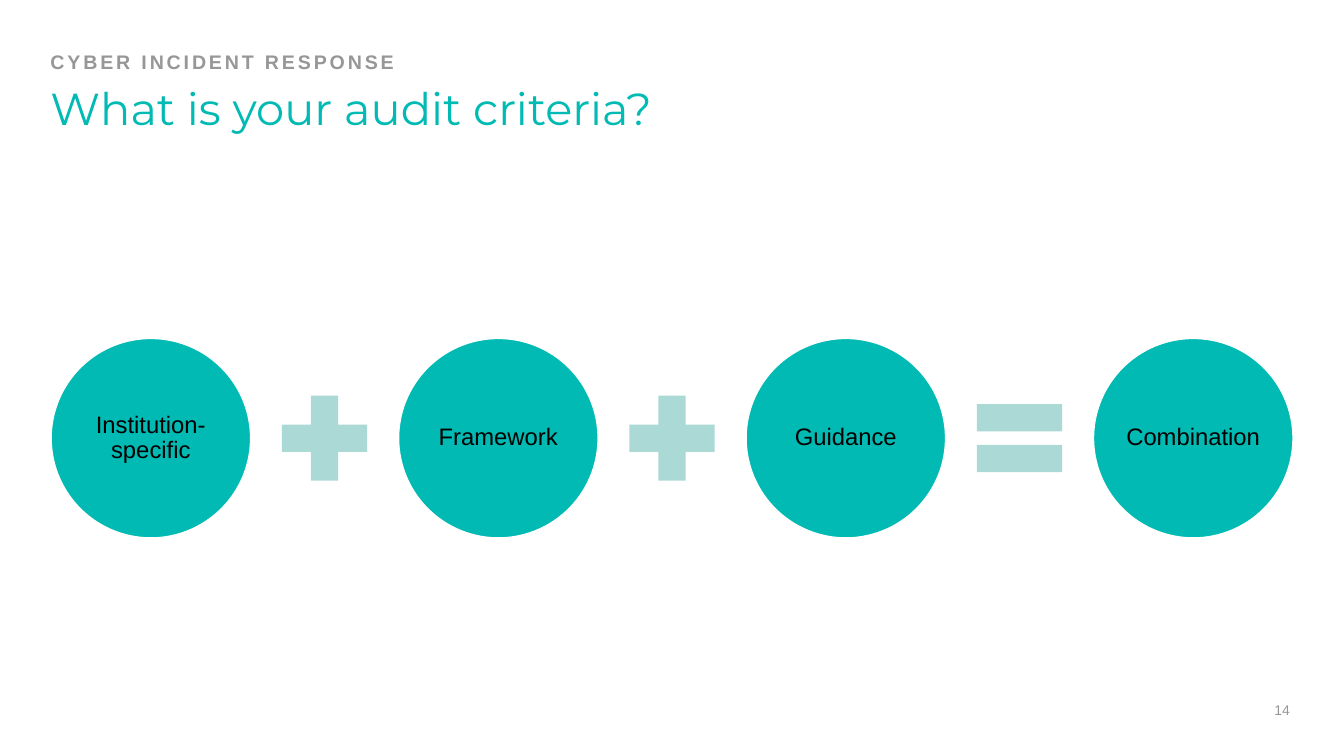
from dataclasses import dataclass

from pptx import Presentation
from pptx.dml.color import RGBColor
from pptx.enum.shapes import MSO_SHAPE
from pptx.enum.text import MSO_ANCHOR, PP_ALIGN
from pptx.util import Pt


@dataclass(frozen=True)
class Theme:
    """Colours, fonts and type sizes of the slide."""
    teal: RGBColor = RGBColor(0x00, 0xBA, 0xB3)
    pale_teal: RGBColor = RGBColor(0xAB, 0xD9, 0xD6)
    grey: RGBColor = RGBColor(0x97, 0x97, 0x97)
    black: RGBColor = RGBColor(0x00, 0x00, 0x00)
    white: RGBColor = RGBColor(0xFF, 0xFF, 0xFF)
    heading_font: str = "Montserrat"
    body_font: str = "Arial"
    title_size: int = 32
    circle_size: int = 17
    eyebrow_size: int = 14
    number_size: int = 10


class SlideBuilder:
    """Adds styled elements to one slide, with lengths in points."""

    def __init__(self, slide, theme):
        """Keep the slide and its theme."""
        self.slide = slide
        self.theme = theme

    def fill_text(self, shape, text, size, color, font=None, bold=False, tracking=0,
                  align=PP_ALIGN.LEFT, anchor=MSO_ANCHOR.TOP, insets=(0, 0, 0, 0)):
        """Put one styled paragraph into a shape."""
        frame = shape.text_frame
        frame.word_wrap = True
        frame.vertical_anchor = anchor
        (frame.margin_left, frame.margin_top,
         frame.margin_right, frame.margin_bottom) = map(Pt, insets)
        paragraph = frame.paragraphs[0]
        paragraph.alignment = align
        paragraph.line_spacing = 0.9
        run = paragraph.add_run()
        run.text = text
        if tracking:
            run._r.get_or_add_rPr().set("spc", str(tracking * 100))
        paragraph.font.name = font or self.theme.body_font
        paragraph.font.size = Pt(size)
        paragraph.font.bold = bold
        paragraph.font.color.rgb = color

    def text(self, left, top, width, height, text, size, color, **style):
        """Add a text box."""
        box = self.slide.shapes.add_textbox(Pt(left), Pt(top), Pt(width), Pt(height))
        self.fill_text(box, text, size, color, **style)

    def shape(self, kind, left, middle, size, fill):
        """Add a square preset shape centred on a horizontal line."""
        shape = self.slide.shapes.add_shape(
            kind, Pt(left), Pt(middle - size / 2), Pt(size), Pt(size))
        shape.shadow.inherit = False
        shape.fill.solid()
        shape.fill.fore_color.rgb = fill
        shape.line.fill.background()
        return shape

    def circle(self, left, middle, size, label):
        """Add a labelled circle with a thin white outline."""
        circle = self.shape(MSO_SHAPE.OVAL, left, middle, size, self.theme.teal)
        circle.line.color.rgb = self.theme.white
        circle.line.width = Pt(1)
        self.fill_text(circle, label, self.theme.circle_size, self.theme.black,
                       align=PP_ALIGN.CENTER, anchor=MSO_ANCHOR.MIDDLE, insets=(1.5,) * 4)

    def equation(self, left, middle, terms, circle_size=142.5, operator_size=82.7, gap=11.5):
        """Add a row of circles, each followed by its operator if it has one."""
        for label, operator in terms:
            self.circle(left, middle, circle_size, label)
            left += circle_size + gap
            if operator is not None:
                self.shape(operator, left, middle, operator_size, self.theme.pale_teal)
                left += operator_size + gap


def main():
    """Build and save the slide."""
    presentation = Presentation()
    presentation.slide_width = Pt(960)
    presentation.slide_height = Pt(540)
    theme = Theme()
    builder = SlideBuilder(presentation.slides.add_slide(presentation.slide_layouts[6]), theme)

    builder.text(36, 38, 888, 15, "CYBER INCIDENT RESPONSE", theme.eyebrow_size, theme.grey,
                 bold=True, tracking=2, anchor=MSO_ANCHOR.BOTTOM)
    builder.text(36, 54.7, 888, 42.5, "What is your audit criteria?", theme.title_size,
                 theme.teal, font=theme.heading_font, insets=(0, 7.2, 0, 0))
    builder.equation(36.5, 313, [
        ("Institution-specific", MSO_SHAPE.MATH_PLUS),
        ("Framework", MSO_SHAPE.MATH_PLUS),
        ("Guidance", MSO_SHAPE.MATH_EQUAL),
        ("Combination", None),
    ])
    builder.text(901.5, 502, 28.8, 12.2, "14", theme.number_size, theme.grey,
                 align=PP_ALIGN.CENTER, anchor=MSO_ANCHOR.MIDDLE)
    presentation.save("out.pptx")


if __name__ == "__main__":
    main()
